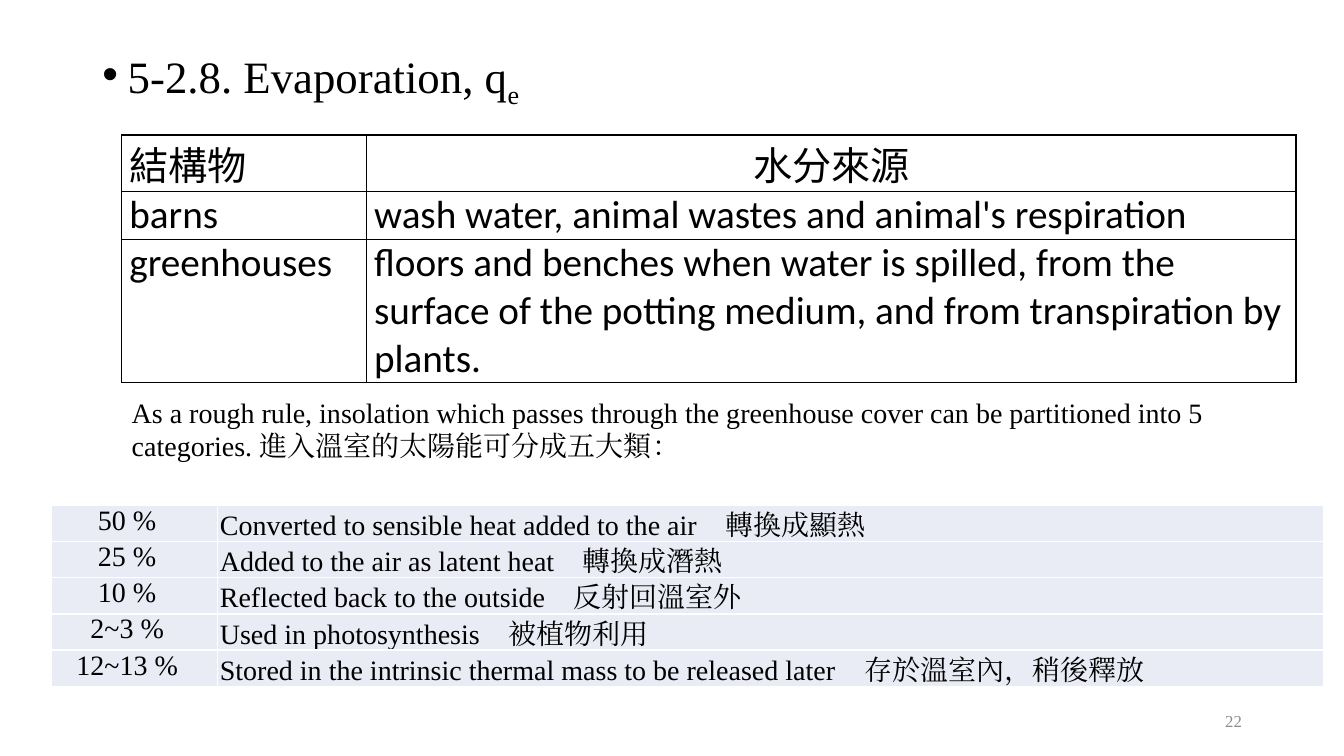
from lxml import etree
from pptx import Presentation
from pptx.dml.color import RGBColor
from pptx.enum.text import MSO_ANCHOR, PP_ALIGN
from pptx.oxml.ns import qn
from pptx.util import Cm, Pt

BLACK = RGBColor(0x00, 0x00, 0x00)
WHITE = RGBColor(0xFF, 0xFF, 0xFF)
GREY = RGBColor(0x8C, 0x8C, 0x8C)
PALE_BLUE = RGBColor(0xE9, 0xEB, 0xF5)
LEFT, CENTER, RIGHT = PP_ALIGN.LEFT, PP_ALIGN.CENTER, PP_ALIGN.RIGHT
MIDDLE = MSO_ANCHOR.MIDDLE
SERIF, SANS, CJK = "Times New Roman", "Calibri", "Noto Sans CJK SC"

SOURCES = [
    ("結構物", "水分來源"),
    ("barns", "wash water, animal wastes and animal's respiration"),
    ("greenhouses", "floors and benches when water is spilled, from the surface of "
     "the potting medium, and from transpiration by plants."),
]
SHARES = [
    ("50 %", "Converted to sensible heat added to the air　轉換成顯熱"),
    ("25 %", "Added to the air as latent heat　轉換成潛熱"),
    ("10 %", "Reflected back to the outside　反射回溫室外"),
    ("2~3 %", "Used in photosynthesis　被植物利用"),
    ("12~13 %", "Stored in the intrinsic thermal mass to be released later　存於溫室內，稍後釋放"),
]


def style_run(r, size, latin, east_asian, color=BLACK):
    r.font.size = Pt(size)
    r.font.name = latin
    r.font.color.rgb = color
    ea = etree.SubElement(r._r.get_or_add_rPr(), qn("a:ea"))
    ea.set("typeface", east_asian)


def add_text(s, left, top, width, height, text, size, color=BLACK, align=LEFT):
    tf = s.shapes.add_textbox(Cm(left), Cm(top), Cm(width), Cm(height)).text_frame
    tf.word_wrap = True
    p = tf.paragraphs[0]
    p.text = text
    p.alignment = align
    style_run(p.runs[0], size, SERIF, SERIF, color)
    return tf


def add_bullet(p, indent):
    pPr = p._p.get_or_add_pPr()
    pPr.set("marL", str(indent))
    pPr.set("indent", str(-indent))
    font = etree.SubElement(pPr, qn("a:buFont"))
    font.set("typeface", "Arial")
    etree.SubElement(pPr, qn("a:buChar")).set("char", "•")


def set_borders(cell, color):
    tcPr = cell._tc.get_or_add_tcPr()
    for i, side in enumerate(("lnL", "lnR", "lnT", "lnB")):
        ln = etree.Element(qn("a:" + side))
        ln.set("w", str(Pt(1)))
        fill = etree.SubElement(ln, qn("a:solidFill"))
        etree.SubElement(fill, qn("a:srgbClr")).set("val", str(color))
        tcPr.insert(i, ln)


def add_grid(s, left, top, widths, heights, rows, border, fill=None):
    frame = s.shapes.add_table(len(rows), len(widths), Cm(left), Cm(top),
                               Cm(sum(widths)), Cm(sum(heights)))
    table = frame.table
    table.first_row = table.horz_banding = False
    for column, width in zip(table.columns, widths):
        column.width = Cm(width)
    for row, height, texts in zip(table.rows, heights, rows):
        row.height = Cm(height)
        for cell, text in zip(row.cells, texts):
            cell.text_frame.text = text
            cell.margin_top = cell.margin_bottom = 0
            if fill is None:
                cell.fill.background()
            else:
                cell.fill.solid()
                cell.fill.fore_color.rgb = fill
            set_borders(cell, border)
    return table


def style_cell(cell, size, latin, east_asian, inset, align=LEFT):
    cell.margin_left = cell.margin_right = Cm(inset)
    p = cell.text_frame.paragraphs[0]
    p.alignment = align
    style_run(p.runs[0], size, latin, east_asian)


def main():
    prs = Presentation()
    prs.slide_width, prs.slide_height = Cm(33.87), Cm(19.05)
    s = prs.slides.add_slide(prs.slide_layouts[6])

    # Heading with a subscript
    tf = add_text(s, 2.33, 0.91, 29.21, 2, "5-2.8. Evaporation, q", 32)
    tf.margin_top = Cm(0.33)
    p = tf.paragraphs[0]
    p.line_spacing = 0.9
    add_bullet(p, Cm(0.64))
    r = p.add_run()
    r.text = "e"
    style_run(r, 32, SERIF, SERIF)
    r._r.get_or_add_rPr().set("baseline", "-25000")

    # Moisture sources
    table = add_grid(s, 3.07, 3.4, (6.17, 23.42), (1.43, 1.2, 3.6), SOURCES, BLACK)
    for i, row in enumerate(table.rows):
        for j, cell in enumerate(row.cells):
            header = i == 0
            style_cell(cell, 28, CJK if header else SANS, CJK, 0.19,
                       CENTER if header and j == 1 else LEFT)

    # Rule of thumb
    add_text(s, 3.07, 9.83, 29.59, 1.96,
             "As a rough rule, insolation which passes through the greenhouse cover "
             "can be partitioned into 5 categories. 進入溫室的太陽能可分成五大類：", 20)

    # Shares of insolation
    table = add_grid(s, 1.3, 12.74, (4.19, 27.86), [0.91] * len(SHARES), SHARES,
                     WHITE, PALE_BLUE)
    for row in table.rows:
        share, use = row.cells
        style_cell(share, 20, SERIF, SERIF, 0.05, CENTER)
        share.margin_right = Cm(0.43)
        style_cell(use, 20, SERIF, SERIF, 0.05)
        use.vertical_anchor = MSO_ANCHOR.BOTTOM

    # Slide number
    tf = add_text(s, 23.93, 17.65, 7.62, 1.02, "22", 12, GREY, RIGHT)
    tf.vertical_anchor = MIDDLE

    prs.save("out.pptx")


if __name__ == "__main__":
    main()
